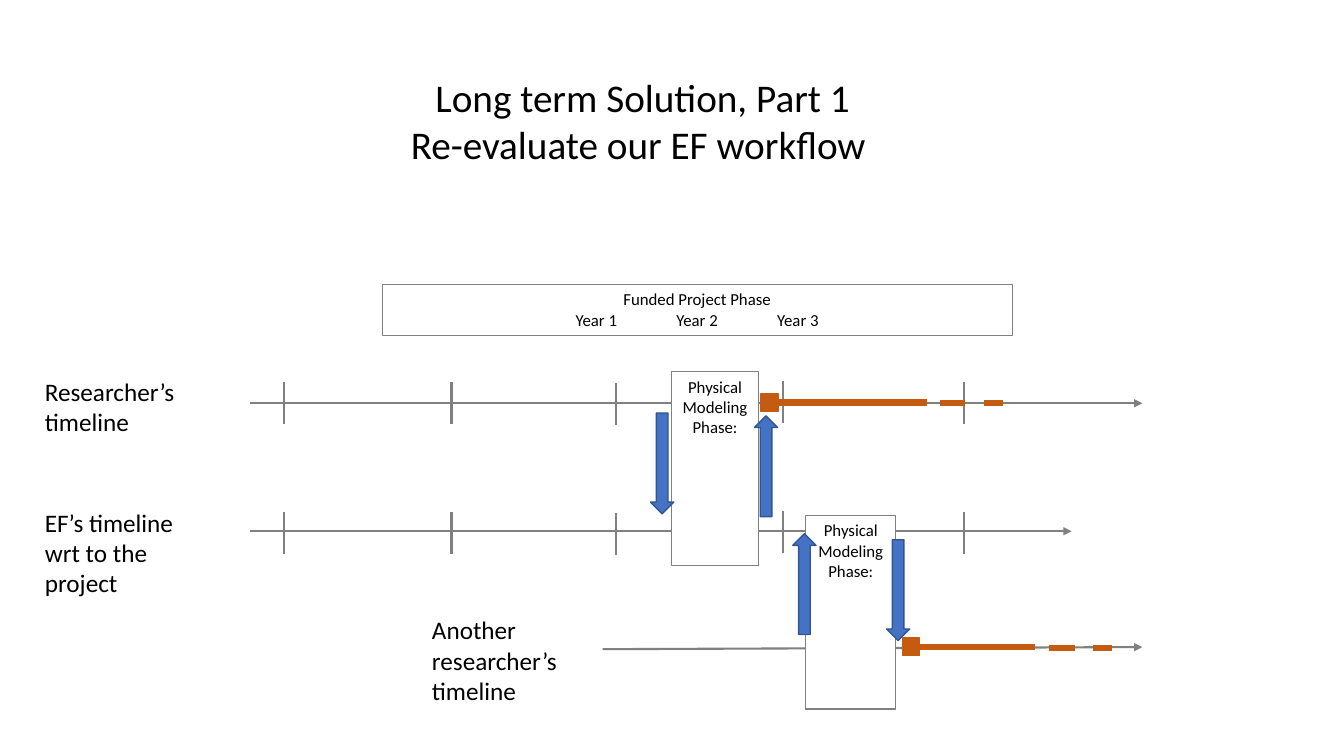
from lxml.etree import SubElement
from pptx import Presentation
from pptx.dml.color import RGBColor
from pptx.enum.dml import MSO_LINE
from pptx.enum.shapes import MSO_CONNECTOR, MSO_SHAPE
from pptx.enum.text import MSO_ANCHOR, MSO_AUTO_SIZE, PP_ALIGN
from pptx.oxml.ns import qn
from pptx.util import Pt

BLACK = RGBColor(0x00, 0x00, 0x00)
WHITE = RGBColor(0xFF, 0xFF, 0xFF)
GRAY = RGBColor(0x80, 0x80, 0x80)
BLUE = RGBColor(0x44, 0x72, 0xC4)
NAVY = RGBColor(0x32, 0x54, 0x91)
ORANGE = RGBColor(0xC5, 0x5A, 0x11)

# Content
TITLE = ["Long term Solution, Part 1", "Re-evaluate our EF workflow "]
FUNDED = ["Funded Project Phase", "Year 1\t\tYear 2\t\tYear 3"]
PHASE = ["Physical Modeling Phase:"]
LABELS = [  # left, top, height, lines
    (25, 265, 51, ["Researcher’s timeline"]),
    (25, 358.5, 73, ["EF’s timeline", "wrt to the project"]),
    (301.5, 435.5, 73, ["Another", "researcher’s timeline"]),
]
LABEL_WIDTH = 111

# Geometry in points
AXES = [  # start x, start y, end x, end y
    (430.5, 463.7, 816, 462.2),
    (178.5, 288, 816, 288),
    (178.5, 379.5, 765.5, 379.5),
]
TICKS = [(203, 0), (322.5, 0), (440, 0.7), (559.5, -0.8), (688.5, 0)]  # x, nudge
TICK_TOPS = [273, 365.5]
TICK_LENGTH = 30
PHASE_BOXES = [(479.5, 265.5, 62.5), (575.5, 368, 64.5)]  # left, top, width
PHASE_HEIGHT = 138.5
DOWN, UP = 90, 270
EXCHANGES = [  # centre x, centre y, direction
    (473, 331, DOWN), (547.2, 333, UP), (574.6, 417.2, UP), (641.5, 421.6, DOWN),
]
ARROW_LENGTH, ARROW_WIDTH = 72, 16.6
MARKER = 12.5
OUTPUTS = [  # marker left, marker top, line y, solid span, dashed span
    (543.5, 281.5, 287.5, (547, 662.5), (671.5, 716.5)),
    (644.5, 455.8, 462.2, (644.5, 739.5), (749.5, 794.5)),
]

deck = Presentation()
deck.slide_width, deck.slide_height = Pt(960), Pt(540)
page = deck.slides.add_slide(deck.slide_layouts[5])


def write(box, lines, size, align):
    frame = box.text_frame
    frame.word_wrap = True
    frame.auto_size = MSO_AUTO_SIZE.NONE
    frame.vertical_anchor = MSO_ANCHOR.TOP
    frame.text = "\n".join(lines)
    for para in frame.paragraphs:
        para.alignment = align
        para.font.name = "Calibri"
        para.font.size = Pt(size)
        para.font.color.rgb = BLACK


def draw_line(x1, y1, x2, y2, color=GRAY, width=1.5, dash=None, arrow=False):
    line = page.shapes.add_connector(
        MSO_CONNECTOR.STRAIGHT, Pt(x1), Pt(y1), Pt(x2), Pt(y2))
    line.line.color.rgb = color
    line.line.width = Pt(width)
    if dash:
        line.line.dash_style = dash
    properties = line._element.spPr
    if arrow:
        SubElement(properties.find(qn("a:ln")), qn("a:tailEnd"), type="triangle")
    SubElement(properties, qn("a:effectLst"))


def draw_shape(kind, left, top, width, height, fill, outline, weight):
    shape = page.shapes.add_shape(kind, Pt(left), Pt(top), Pt(width), Pt(height))
    shape.shadow.inherit = False
    if fill is None:
        shape.fill.background()
    else:
        shape.fill.solid()
        shape.fill.fore_color.rgb = fill
    shape.line.color.rgb = outline
    shape.line.width = Pt(weight)
    return shape


# Title
title = page.shapes.title
title.left, title.top, title.width, title.height = Pt(95), Pt(49), Pt(728), Pt(75)
write(title, TITLE, 28, PP_ALIGN.CENTER)

# Timelines with year ticks
for axis in AXES:
    draw_line(*axis, arrow=True)
for tick_top in TICK_TOPS:
    for x, nudge in TICKS:
        draw_line(x, tick_top + nudge, x, tick_top + nudge + TICK_LENGTH)

# Timeline labels
for left, top, height, lines in LABELS:
    label = page.shapes.add_textbox(Pt(left), Pt(top), Pt(LABEL_WIDTH), Pt(height))
    write(label, lines, 18, PP_ALIGN.LEFT)

# Funded period and modeling phases
funded = draw_shape(MSO_SHAPE.RECTANGLE, 273, 203, 450, 36.5, None, GRAY, 0.75)
write(funded, FUNDED, 12, PP_ALIGN.CENTER)
for left, top, width in PHASE_BOXES:
    phase = draw_shape(MSO_SHAPE.RECTANGLE, left, top, width, PHASE_HEIGHT,
                       WHITE, GRAY, 0.75)
    write(phase, PHASE, 12, PP_ALIGN.CENTER)

# Exchange arrows between timelines
for x, y, direction in EXCHANGES:
    arrow = draw_shape(MSO_SHAPE.RIGHT_ARROW, x - ARROW_LENGTH / 2,
                       y - ARROW_WIDTH / 2, ARROW_LENGTH, ARROW_WIDTH,
                       BLUE, NAVY, 1)
    arrow.rotation = direction

# Orange outputs that follow each modeling phase
for left, top, y, solid, dashed in OUTPUTS:
    draw_shape(MSO_SHAPE.RECTANGLE, left, top, MARKER, MARKER, ORANGE, ORANGE, 1)
    draw_line(solid[0], y, solid[1], y, ORANGE, 4.5)
    draw_line(dashed[0], y + 0.5, dashed[1], y + 0.5, ORANGE, 4.5, MSO_LINE.DASH)

deck.save("out.pptx")
